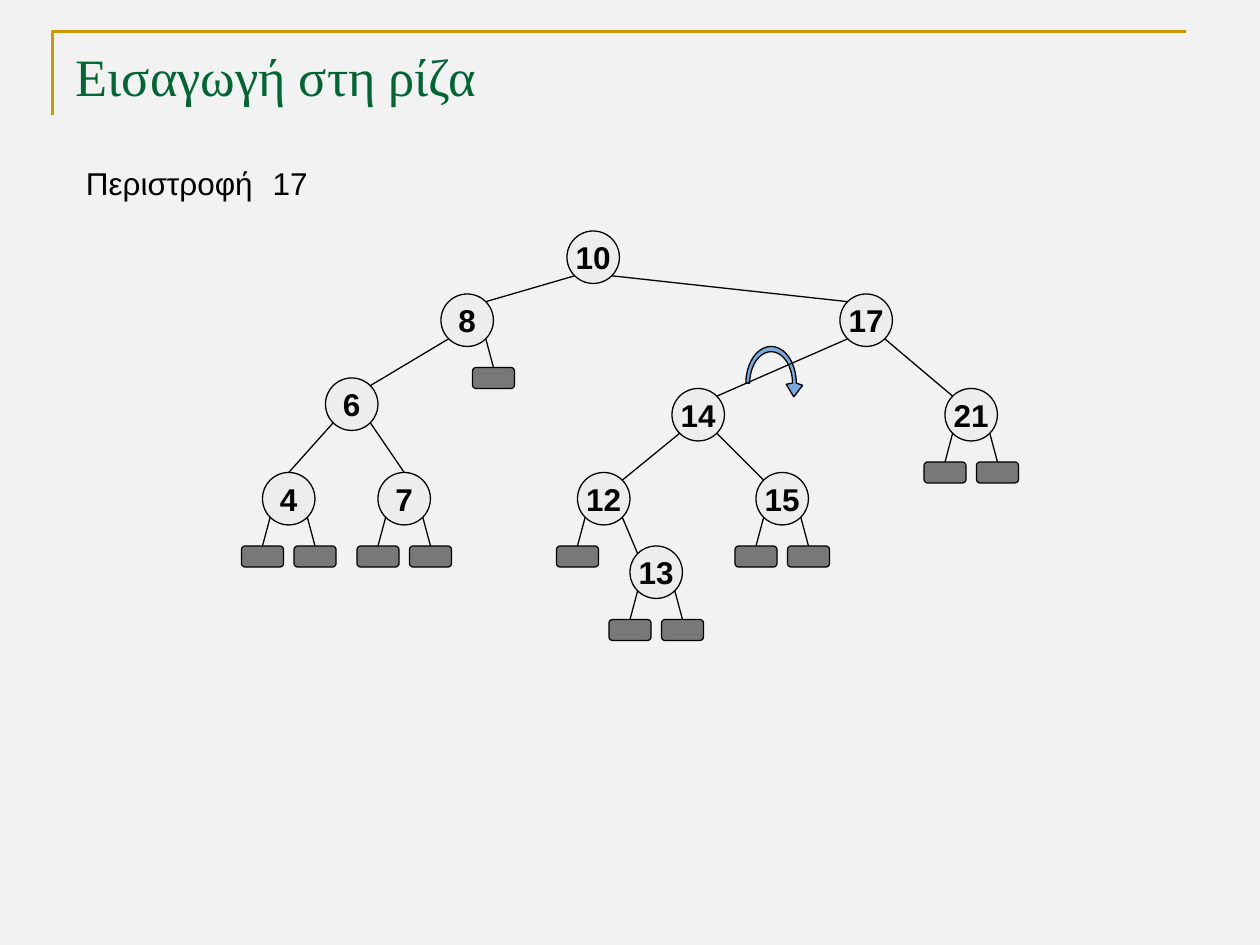
"""Builds a slide that shows a rotation at node 17 of a binary search tree."""
from dataclasses import dataclass
from math import cos, pi, sin
from typing import Optional

from lxml.etree import SubElement
from pptx import Presentation
from pptx.dml.color import RGBColor as Rgb
from pptx.enum.shapes import MSO_CONNECTOR as Connector, MSO_SHAPE as Preset
from pptx.enum.text import MSO_ANCHOR as Anchor, PP_ALIGN as Align
from pptx.oxml.ns import qn
from pptx.util import Inches, Pt

NODE = 5
LEAF_WIDTH, LEAF_HEIGHT, LEAF_DROP = 4, 2, 7
DIAGONAL = NODE / 2 * cos(pi / 4)


@dataclass(frozen=True)
class Theme:
    background: str = "F2F2F2"
    frame: str = "CC9900"
    title: str = "006633"
    ink: str = "000000"
    node: str = "EAEAEA"
    arrow: str = "0066CC"
    title_font: str = "Times New Roman"
    body_font: str = "Arial"
    title_size: float = 30
    body_size: float = 18
    thin: float = 0.75
    thick: float = 1.5


@dataclass
class Node:
    key: str
    col: float
    row: float
    left: Optional["Node"] = None
    right: Optional["Node"] = None
    joined_at_top: bool = False


class TreeSlide:
    def __init__(self, deck, theme, columns=120, rows=90):
        self.theme = theme
        self.slide = deck.slides.add_slide(deck.slide_layouts[5])
        self.shapes = self.slide.shapes
        self.cell_width = deck.slide_width / columns
        self.cell_height = deck.slide_height / rows
        backdrop = self.slide.background.fill
        backdrop.solid()
        backdrop.fore_color.rgb = Rgb.from_string(theme.background)

    def at(self, col, row):
        return round(col * self.cell_width), round(row * self.cell_height)

    def paint(self, shape, color, opacity, line=None, width=None):
        shape.shadow.inherit = False
        if color:
            shape.fill.solid()
            shape.fill.fore_color.rgb = Rgb.from_string(color)
            solid = shape.element.spPr.find(qn("a:solidFill"))
            SubElement(solid[0], qn("a:alpha"), val=str(opacity * 1000))
        else:
            shape.fill.background()
        shape.line.color.rgb = Rgb.from_string(line or self.theme.ink)
        shape.line.width = Pt(width or self.theme.thin)

    def add_words(self, paragraph, words, color, font, size, bold=False):
        run = paragraph.add_run()
        run.text = words
        run.font.name, run.font.size, run.font.bold = font, Pt(size), bold
        run.font.color.rgb = Rgb.from_string(color)

    def body(self, paragraph, words, bold=False):
        self.add_words(paragraph, words, self.theme.ink, self.theme.body_font,
                       self.theme.body_size, bold)

    def title(self, words, col, row, width, height):
        heading = self.shapes.title
        heading.left, heading.top = self.at(col, row)
        heading.width, heading.height = self.at(width, height)
        heading.text_frame.vertical_anchor = Anchor.TOP
        paragraph = heading.text_frame.paragraphs[0]
        paragraph.alignment = Align.LEFT
        self.add_words(paragraph, words, self.theme.title, self.theme.title_font,
                       self.theme.title_size)

    def caption(self, words, col, row, width, height, wrap=True):
        box = self.shapes.add_textbox(*self.at(col, row), *self.at(width, height))
        box.text_frame.word_wrap = wrap
        self.body(box.text_frame.paragraphs[0], words)

    def outline(self, points, closed, color=None, opacity=100, line=None, width=None):
        start, *others = [self.at(*point) for point in points]
        builder = self.shapes.build_freeform(*start)
        builder.add_line_segments(others, close=closed)
        self.paint(builder.convert_to_shape(), color, opacity, line, width)

    def edge(self, start, end):
        link = self.shapes.add_connector(Connector.STRAIGHT, *self.at(*start), *self.at(*end))
        link.line.color.rgb = Rgb.from_string(self.theme.ink)
        link.line.width = Pt(self.theme.thin)
        SubElement(link.element.spPr, qn("a:effectLst"))

    def node(self, key, col, row):
        circle = self.shapes.add_shape(Preset.OVAL, *self.at(col, row), *self.at(NODE, NODE))
        self.paint(circle, self.theme.node, 60)
        frame = circle.text_frame
        frame.word_wrap = False
        frame.vertical_anchor = Anchor.MIDDLE
        frame.paragraphs[0].alignment = Align.CENTER
        self.body(frame.paragraphs[0], key, bold=True)

    def leaf(self, col, row):
        block = self.shapes.add_shape(Preset.ROUNDED_RECTANGLE, *self.at(col, row),
                                      *self.at(LEAF_WIDTH, LEAF_HEIGHT))
        self.paint(block, self.theme.ink, 50)

    def tree(self, root):
        center, middle = root.col + NODE / 2, root.row + NODE / 2
        for side, child in ((-1, root.left), (1, root.right)):
            start = center + side * DIAGONAL, middle + DIAGONAL
            if child is None:
                leaf_center, leaf_top = center + side * NODE / 2, root.row + LEAF_DROP
                self.leaf(leaf_center - LEAF_WIDTH / 2, leaf_top)
                end = leaf_center, leaf_top
            else:
                self.tree(child)
                lean, rise = (0, NODE / 2) if child.joined_at_top else (side * DIAGONAL, DIAGONAL)
                end = child.col + NODE / 2 - lean, child.row + NODE / 2 - rise
            self.edge(start, end)
        self.node(root.key, root.col, root.row)

    def rotation_arrow(self, col, row, steps=24):
        def arc(width, height):
            return [(col + width * cos(pi * step / steps), row - height * sin(pi * step / steps))
                    for step in range(steps + 1)]
        head = [(col + 3, row + 0.2), (col + 2.16, row + 1.3), (col + 1.44, row + 0.1)]
        band = arc(2.04, 3) + arc(2.4, 3.5)[::-1]
        self.outline(band + head, True, self.theme.arrow, 50)


def main():
    deck = Presentation()
    deck.slide_width, deck.slide_height = Inches(10), Inches(7.5)
    theme = Theme()
    page = TreeSlide(deck, theme)
    page.outline([(5, 11), (5, 3), (113, 3)], False, line=theme.frame, width=theme.thick)
    page.title("Εισαγωγή στη ρίζα", 6, 3.6, 108, 6.4)
    page.caption("Περιστροφή", 7, 15, 21, 6)
    page.caption("17", 24.8, 15, 5.8, 4.8, wrap=False)

    six = Node("6", 31, 36, Node("4", 25, 45, joined_at_top=True),
               Node("7", 36, 45, joined_at_top=True))
    twelve = Node("12", 55, 45, right=Node("13", 60, 52))
    fourteen = Node("14", 64, 37, twelve, Node("15", 72, 45))
    seventeen = Node("17", 80, 28, fourteen, Node("21", 90, 37))
    page.tree(Node("10", 54, 22, Node("8", 42, 28, six), seventeen))
    page.rotation_arrow(73.44, 36.5)
    deck.save("out.pptx")


if __name__ == "__main__":
    main()
